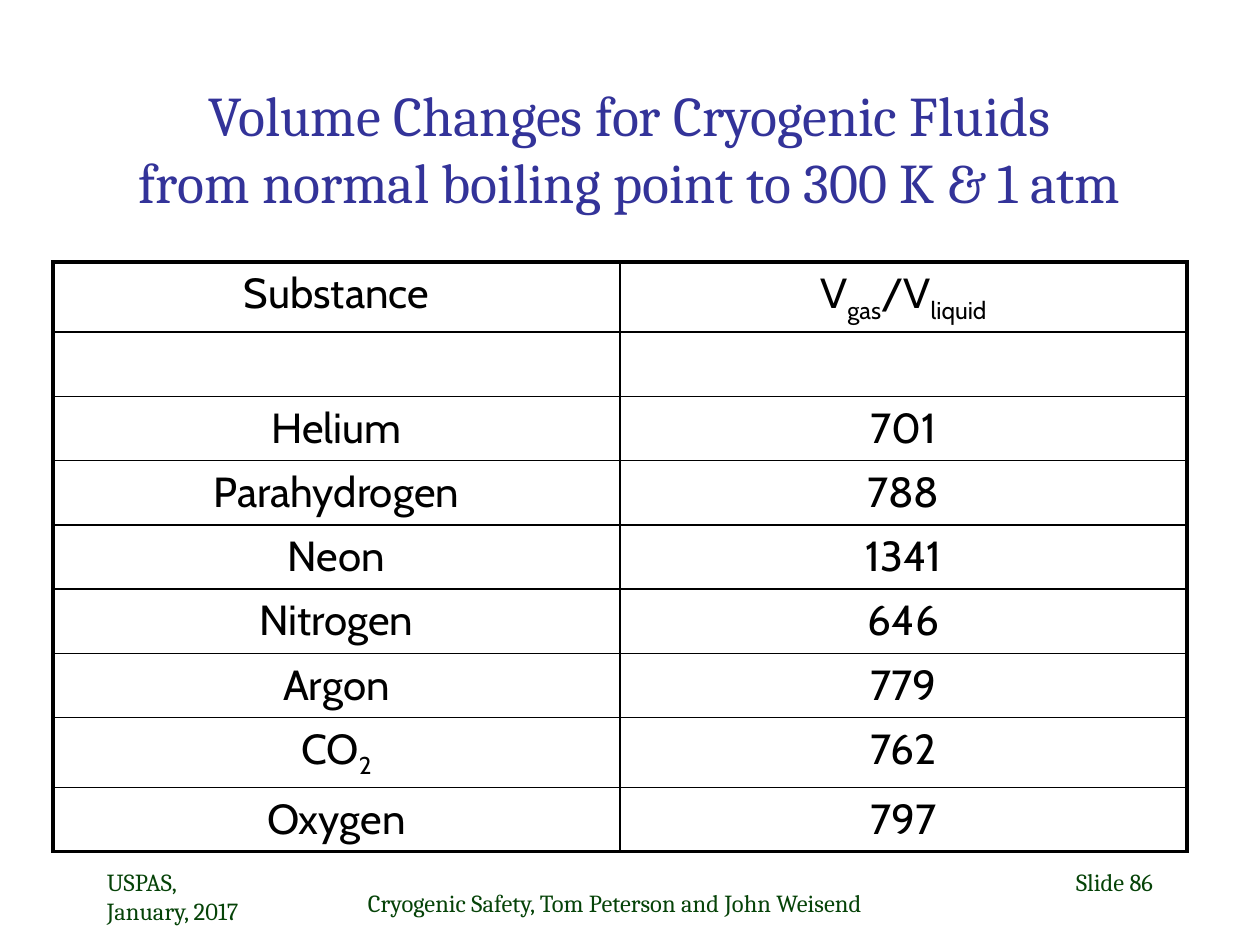
"""Build a slide with a table of volume changes for cryogenic fluids."""
from lxml import etree
from pptx import Presentation
from pptx.dml.color import RGBColor
from pptx.enum.text import MSO_ANCHOR, MSO_AUTO_SIZE, PP_ALIGN
from pptx.oxml.ns import qn
from pptx.util import Inches, Pt

LEFT, CENTER, RIGHT = PP_ALIGN.LEFT, PP_ALIGN.CENTER, PP_ALIGN.RIGHT
TOP, MIDDLE = MSO_ANCHOR.TOP, MSO_ANCHOR.MIDDLE
NO_FIT = MSO_AUTO_SIZE.NONE
TITLE_FONT, TABLE_FONT = "Cambria", "Cabin"
BLUE, GREEN, BLACK = "333399", "064308", "000000"
THIN, THICK = 1, 2.25

TITLE = "Volume Changes for Cryogenic Fluids\vfrom normal boiling point to 300 K & 1 atm"
TITLE_AREA = (0.75, 0.67, 8.5, 1)
FOOTERS = [
    ("USPAS,\vJanuary, 2017", (0.75, 6.83, 1.75, 0.5), LEFT),
    ("Cryogenic Safety, Tom Peterson and John Weisend", (2.67, 7, 4.42, 0.33), CENTER),
    ("Slide 86", (7.17, 6.83, 2.08, 0.5), RIGHT),
]
# Within a cell, every second piece is a subscript.
ROWS = [
    (["Substance"], ["V", "gas", "/V", "liquid"]),
    ([], []),
    (["Helium"], ["701"]),
    (["Parahydrogen"], ["788"]),
    (["Neon"], ["1341"]),
    (["Nitrogen"], ["646"]),
    (["Argon"], ["779"]),
    (["CO", "2"], ["762"]),
    (["Oxygen"], ["797"]),
]
TABLE_LEFT, TABLE_TOP, COLUMN_WIDTH, ROW_HEIGHT = 0.42, 2.08, 4.5, 0.51
SUBSCRIPT_ROW_HEIGHT = 0.55


def color(value):
    """Return the colour for a hex string."""
    return RGBColor.from_string(value)


def write(frame, pieces, font=TITLE_FONT, size=14, fill=GREEN, align=LEFT, anchor=TOP):
    """Write pieces of text, every second one as a subscript."""
    frame.word_wrap = True
    frame.vertical_anchor = anchor
    para = frame.paragraphs[0]
    para.alignment = align
    for index, piece in enumerate(pieces):
        for number, line in enumerate(piece.split("\v")):
            if number:
                para.add_line_break()
            span = para.add_run()
            span.text = line
            span.font.name = font
            span.font.size = Pt(size)
            span.font.color.rgb = color(fill)
            if index % 2:
                span.font._element.set("baseline", "-25000")


def set_borders(cell, widths):
    """Draw the left, right, top and bottom borders of a cell."""
    properties = cell._tc.get_or_add_tcPr()
    for index, (side, width) in enumerate(zip("LRTB", widths)):
        line = etree.Element(qn(f"a:ln{side}"), w=str(Pt(width)))
        paint = etree.SubElement(line, qn("a:solidFill"))
        etree.SubElement(paint, qn("a:srgbClr"), val=BLACK)
        properties.insert(index, line)


def add_title(page):
    """Place and fill the title placeholder."""
    title = page.shapes.title
    title.left, title.top, title.width, title.height = map(Inches, TITLE_AREA)
    title.text_frame.auto_size = NO_FIT
    write(title.text_frame, [TITLE], size=32, fill=BLUE, align=CENTER, anchor=MIDDLE)


def add_volume_table(page):
    """Add the table of gas to liquid volume ratios."""
    row_count, column_count = len(ROWS), len(ROWS[0])
    table = page.shapes.add_table(
        row_count, column_count, Inches(TABLE_LEFT), Inches(TABLE_TOP),
        Inches(COLUMN_WIDTH * column_count), Inches(ROW_HEIGHT * row_count)).table
    table.first_row = table.horz_banding = False
    for column in table.columns:
        column.width = Inches(COLUMN_WIDTH)
    for row, cells in enumerate(ROWS):
        has_subscript = any(len(pieces) > 1 for pieces in cells)
        table.rows[row].height = Inches(SUBSCRIPT_ROW_HEIGHT if has_subscript else ROW_HEIGHT)
        for column, pieces in enumerate(cells):
            cell = table.cell(row, column)
            cell.fill.background()
            write(cell.text_frame, pieces, font=TABLE_FONT, size=24, fill=BLACK, align=CENTER)
            outer = (column == 0, column == column_count - 1, row == 0, row == row_count - 1)
            set_borders(cell, [THICK if edge else THIN for edge in outer])


def main():
    """Build and save the deck."""
    deck = Presentation()
    deck.slide_width, deck.slide_height = Inches(10), Inches(7.5)
    page = deck.slides.add_slide(deck.slide_layouts[5])
    add_title(page)
    for text, area, align in FOOTERS:
        box = page.shapes.add_textbox(*map(Inches, area))
        write(box.text_frame, [text], align=align)
    add_volume_table(page)
    deck.save("out.pptx")


if __name__ == "__main__":
    main()
